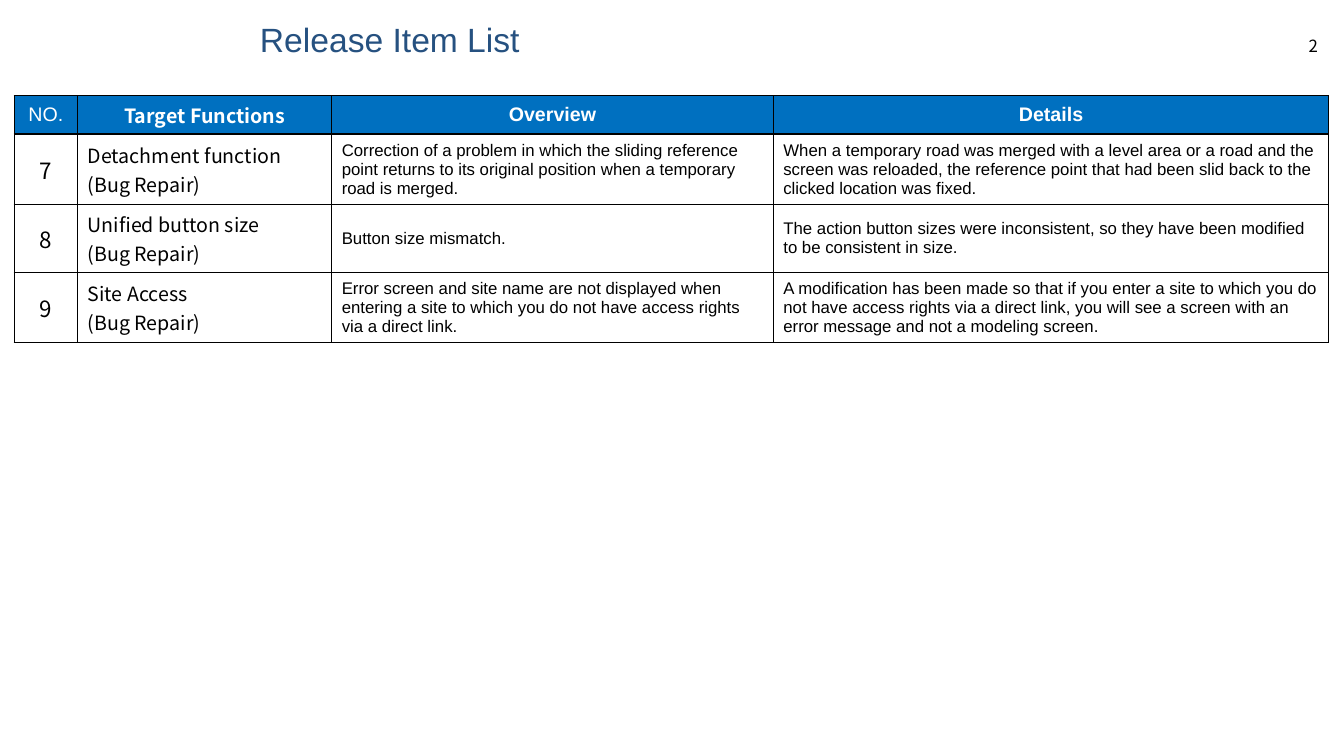
from lxml import etree
from pptx import Presentation
from pptx.dml.color import RGBColor
from pptx.enum import text as t
from pptx.oxml import ns
from pptx.util import Inches, Pt

COLORS = {"title": "265180", "header": "0070C0", "body": "FFFFFF",
          "ink": "000000", "header_text": "FFFFFF"}
SANS, CJK = "Arial", "Noto Sans CJK JP"
LEFT, CENTER, RIGHT = t.PP_ALIGN.LEFT, t.PP_ALIGN.CENTER, t.PP_ALIGN.RIGHT

COLUMN_WIDTHS = [0.63, 2.52, 4.38, 5.51]
HEADER_HEIGHT, ITEM_HEIGHT = 0.38, 0.67

# (font, size, alignment, bold) for each column
HEADER_STYLES = [(SANS, 14, CENTER, False), (CJK, 14, CENTER, True),
                 (SANS, 14, CENTER, True), (SANS, 14, CENTER, True)]
ITEM_STYLES = [(CJK, 16, CENTER, False), (CJK, 14, LEFT, False),
               (SANS, 12, LEFT, False), (SANS, 12, LEFT, False)]

HEADERS = ["NO.", "Target Functions", "Overview", "Details"]
ITEMS = [
    ["7", "Detachment function\n(Bug Repair)",
     "Correction of a problem in which the sliding reference point returns to "
     "its original position when a temporary road is merged.",
     "When a temporary road was merged with a level area or a road and the "
     "screen was reloaded, the reference point that had been slid back to the "
     "clicked location was fixed."],
    ["8", "Unified button size\n(Bug Repair)",
     "Button size mismatch.",
     "The action button sizes were inconsistent, so they have been modified "
     "to be consistent in size."],
    ["9", "Site Access\n(Bug Repair)",
     "Error screen and site name are not displayed when entering a site to "
     "which you do not have access rights via a direct link.",
     "A modification has been made so that if you enter a site to which you "
     "do not have access rights via a direct link, you will see a screen with "
     "an error message and not a modeling screen."],
]


def write(frame, content, style, color):
    frame.text = content
    frame.word_wrap = True
    font_name, size, alignment, bold = style
    for paragraph in frame.paragraphs:
        paragraph.alignment = alignment
        font = paragraph.font
        font.name, font.size, font.bold = font_name, Pt(size), bold
        font.color.rgb = RGBColor.from_string(COLORS[color])


def add_label(slide, box, content, style, color):
    frame = slide.shapes.add_textbox(*map(Inches, box)).text_frame
    frame.vertical_anchor = t.MSO_ANCHOR.MIDDLE
    write(frame, content, style, color)
    return frame


def add_borders(cell):
    properties = cell._tc.get_or_add_tcPr()
    for side in ("a:lnL", "a:lnR", "a:lnT", "a:lnB"):
        line = etree.SubElement(properties, ns.qn(side), w=str(Pt(1)))
        fill = etree.SubElement(line, ns.qn("a:solidFill"))
        etree.SubElement(fill, ns.qn("a:srgbClr"), val=COLORS["ink"])


def fill_row(row, contents, styles, background, color):
    for cell, content, style in zip(row.cells, contents, styles):
        add_borders(cell)
        cell.fill.solid()
        cell.fill.fore_color.rgb = RGBColor.from_string(COLORS[background])
        cell.vertical_anchor = t.MSO_ANCHOR.MIDDLE
        write(cell.text_frame, content, style, color)


def add_release_table(slide, left, top):
    heights = [HEADER_HEIGHT] + [ITEM_HEIGHT] * len(ITEMS)
    box = (left, top, sum(COLUMN_WIDTHS), sum(heights))
    table = slide.shapes.add_table(
        len(heights), len(COLUMN_WIDTHS), *map(Inches, box)).table
    table.first_row = table.horz_banding = False
    for column, width in zip(table.columns, COLUMN_WIDTHS):
        column.width = Inches(width)
    for row, height in zip(table.rows, heights):
        row.height = Inches(height)
    header_row, *item_rows = table.rows
    fill_row(header_row, HEADERS, HEADER_STYLES, "header", "header_text")
    for row, item in zip(item_rows, ITEMS):
        fill_row(row, item, ITEM_STYLES, "body", "ink")


def main():
    deck = Presentation()
    deck.slide_width, deck.slide_height = Inches(13.33), Inches(7.5)
    slide = deck.slides.add_slide(deck.slide_layouts[6])
    add_label(slide, (12.48, 0.3, 0.69, 0.3), "2",
              (CJK, 12, RIGHT, False), "ink")
    title = add_label(slide, (2.48, 0.2, 8.92, 0.42), "Release Item List",
                      (SANS, 24, LEFT, False), "title")
    title.paragraphs[0].line_spacing = 0.9
    add_release_table(slide, 0.14, 0.95)
    deck.save("out.pptx")


if __name__ == "__main__":
    main()
